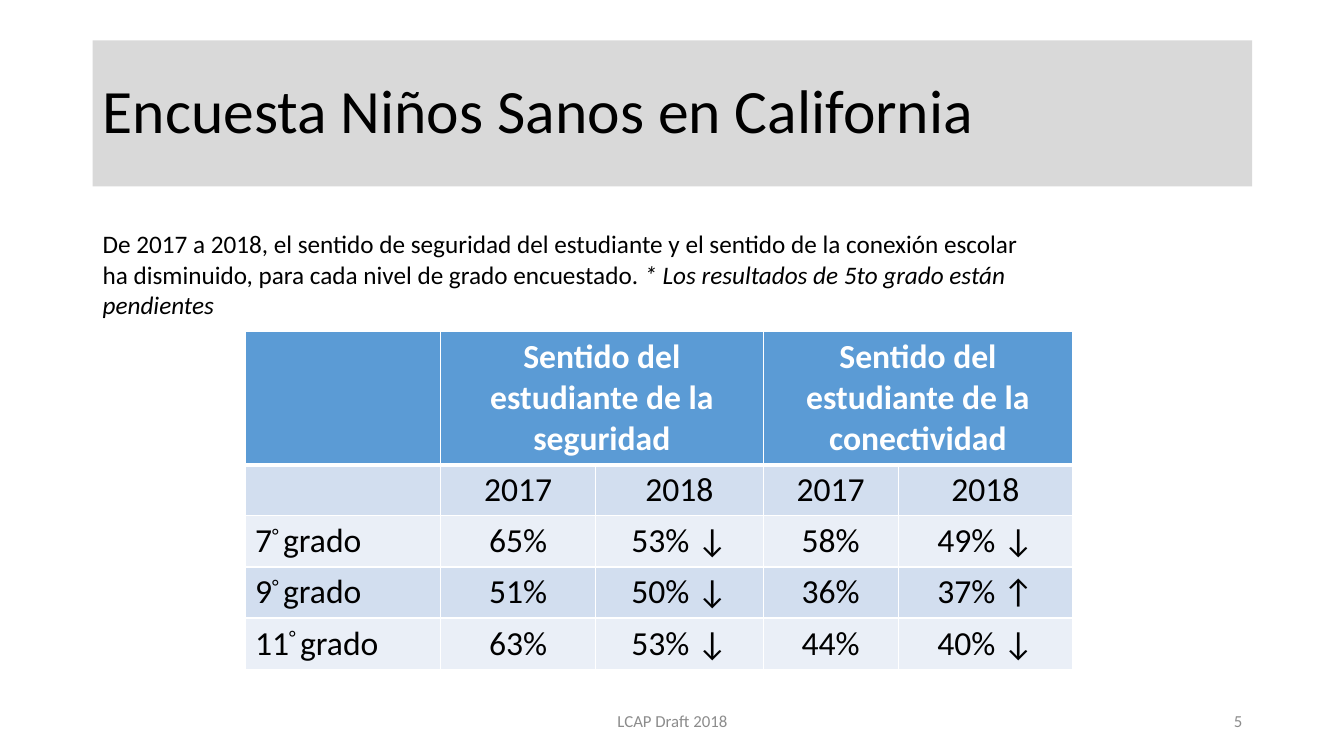
from lxml.etree import SubElement
from pptx import Presentation
from pptx.dml.color import RGBColor
from pptx.enum.shapes import MSO_SHAPE
from pptx.enum.text import MSO_ANCHOR, PP_ALIGN
from pptx.oxml.ns import qn
from pptx.util import Inches, Pt

BLACK = RGBColor(0x00, 0x00, 0x00)
WHITE = RGBColor(0xFF, 0xFF, 0xFF)
TITLE_GRAY = RGBColor(0xD9, 0xD9, 0xD9)
FOOTER_GRAY = RGBColor(0x8C, 0x8C, 0x8C)
HEADER_BLUE = RGBColor(0x5B, 0x9B, 0xD5)
BAND_DARK = RGBColor(0xD2, 0xDE, 0xEF)
BAND_LIGHT = RGBColor(0xEA, 0xEF, 0xF7)

COLUMN_WIDTHS = [1.94, 1.54, 1.66, 1.34, 1.73]
ROW_HEIGHTS = [1.3] + [0.5] * 4
HEADINGS = {1: "Sentido del estudiante de la seguridad",
            3: "Sentido del estudiante de la conectividad"}
YEARS = ["2017", "2018", "2017", "2018"]
GRADES = [
    ("7", ["65%", "53% ↓", "58%", "49% ↓"]),
    ("9", ["51%", "50% ↓", "36%", "37% ↑"]),
    ("11", ["63%", "53% ↓", "44%", "40% ↓"]),
]


class SlideBuilder:
    def __init__(self, page, font="Calibri"):
        self.page = page
        self.font = font

    def add_spans(self, frame, spans, size, color=BLACK, align=PP_ALIGN.LEFT):
        """Fill the first paragraph with (text, style) runs."""
        frame.word_wrap = True
        para = frame.paragraphs[0]
        para.alignment = align
        for text, style in spans:
            span = para.add_run()
            span.text = text
            span.font.name = self.font
            span.font.size = Pt(size)
            span.font.color.rgb = color
            span.font.bold = style == "bold"
            span.font.italic = style == "italic"
            if style == "super":
                span.font._element.set("baseline", "30000")
        return para

    def title(self, place, text):
        box = self.page.shapes.add_shape(MSO_SHAPE.RECTANGLE, *map(Inches, place))
        box.shadow.inherit = False
        box.fill.solid()
        box.fill.fore_color.rgb = TITLE_GRAY
        box.line.fill.background()
        box.text_frame.vertical_anchor = MSO_ANCHOR.MIDDLE
        para = self.add_spans(box.text_frame, [(text, None)], 44)
        para.line_spacing = 0.9

    def text(self, place, spans, size, color=BLACK, align=PP_ALIGN.LEFT,
             anchor=MSO_ANCHOR.TOP):
        box = self.page.shapes.add_textbox(*map(Inches, place))
        box.text_frame.vertical_anchor = anchor
        self.add_spans(box.text_frame, spans, size, color, align)

    def table(self, left, top, widths, heights):
        frame = self.page.shapes.add_table(
            len(heights), len(widths), Inches(left), Inches(top),
            Inches(sum(widths)), Inches(sum(heights)))
        grid = frame.table
        grid.first_row = grid.horz_banding = False
        for column, width in zip(grid.columns, widths):
            column.width = Inches(width)
        for row, height in zip(grid.rows, heights):
            row.height = Inches(height)
        for number in range(len(heights)):
            fill = HEADER_BLUE if number == 0 else (BAND_LIGHT, BAND_DARK)[number % 2]
            for column in range(len(widths)):
                cell = grid.cell(number, column)
                self.borders(cell, top=3 if number == 1 else 1,
                             bottom=3 if number == 0 else 1)
                cell.fill.solid()
                cell.fill.fore_color.rgb = fill
        return grid

    def borders(self, cell, top, bottom):
        properties = cell._tc.get_or_add_tcPr()
        for side, weight in (("L", 1), ("R", 1), ("T", top), ("B", bottom)):
            line = SubElement(properties, qn(f"a:ln{side}"), w=str(Pt(weight)))
            fill = SubElement(line, qn("a:solidFill"))
            SubElement(fill, qn("a:srgbClr"), val=str(WHITE))


def main():
    deck = Presentation()
    deck.slide_width, deck.slide_height = Inches(13.33), Inches(7.5)
    builder = SlideBuilder(deck.slides.add_slide(deck.slide_layouts[6]))

    # Title band
    builder.title((0.92, 0.4, 11.5, 1.45), "Encuesta Niños Sanos en California")

    # Survey table
    grid = builder.table(2.43, 3.29, COLUMN_WIDTHS, ROW_HEIGHTS)
    for column, heading in HEADINGS.items():
        cell = grid.cell(0, column)
        cell.merge(grid.cell(0, column + 1))
        builder.add_spans(cell.text_frame, [(heading, "bold")], 24, WHITE,
                          PP_ALIGN.CENTER)
    for number, (grade, _) in enumerate(GRADES, 2):
        builder.add_spans(grid.cell(number, 0).text_frame,
                          [(grade, None), ("° ", "super"), ("grado", None)], 24)
    for number, values in enumerate([YEARS] + [values for _, values in GRADES], 1):
        for column, value in enumerate(values, 1):
            builder.add_spans(grid.cell(number, column).text_frame, [(value, None)], 24,
                              align=PP_ALIGN.CENTER)

    # Footer and page number
    for place, label, align in (
            ((4.42, 6.95, 4.5, 0.4), "LCAP Draft 2018", PP_ALIGN.CENTER),
            ((9.42, 6.95, 3, 0.4), "5", PP_ALIGN.RIGHT)):
        builder.text(place, [(label, None)], 12, FOOTER_GRAY, align, MSO_ANCHOR.MIDDLE)

    # Summary above the table
    builder.text((0.92, 2.22, 9.5, 1.01), [
        ("De 2017 a 2018, el sentido de seguridad del estudiante y el sentido de la "
         "conexión escolar ha disminuido, para cada nivel de grado encuestado", None),
        (". * Los resultados de 5to grado están pendientes", "italic")], 18)

    deck.save("out.pptx")


if __name__ == "__main__":
    main()
